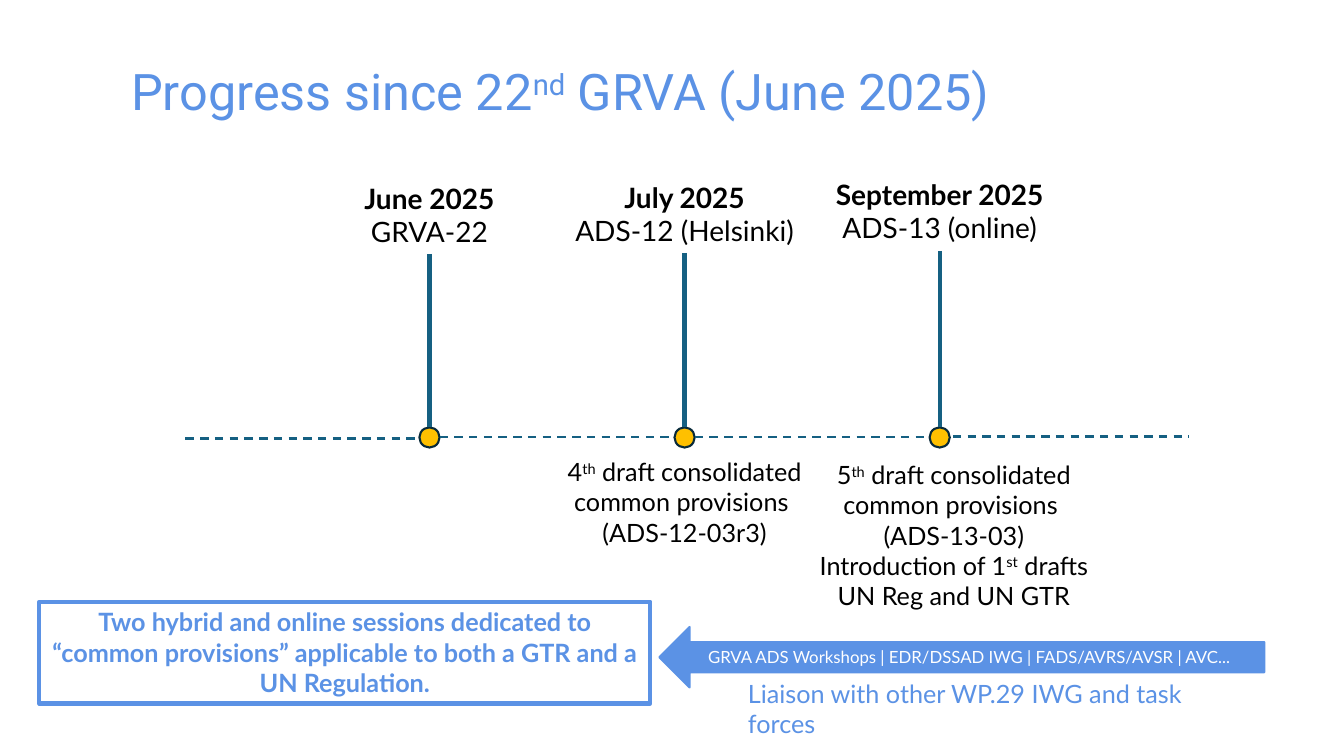
from dataclasses import dataclass

from pptx import Presentation
from pptx.dml.color import RGBColor
from pptx.enum.dml import MSO_LINE
from pptx.enum.shapes import MSO_CONNECTOR, MSO_SHAPE
from pptx.enum.text import MSO_ANCHOR, MSO_AUTO_SIZE, PP_ALIGN
from pptx.oxml import parse_xml
from pptx.oxml.ns import nsdecls
from pptx.shapes.autoshape import Shape
from pptx.slide import Slide
from pptx.text.text import TextFrame
from pptx.util import Emu, Pt

PX = 9144


@dataclass(frozen=True)
class Theme:
    accent: str = "5B92E5"
    stem: str = "156082"
    marker: str = "FFC000"
    marker_edge: str = "092A39"
    ink: str = "000000"
    paper: str = "FFFFFF"
    title_font: str = "Roboto"
    body_font: str = "Lato"
    title_size: int = 36
    label_size: int = 20
    body_size: int = 18
    small_size: int = 12
    thin: float = 1.5
    thick: float = 3


@dataclass(frozen=True)
class Box:
    left: int
    top: int
    width: int
    height: int

    def emu(self) -> tuple[Emu, Emu, Emu, Emu]:
        return px(self.left), px(self.top), px(self.width), px(self.height)


@dataclass(frozen=True)
class Paragraph:
    text: str
    bold: bool = False


@dataclass(frozen=True)
class Style:
    size: int
    color: str
    font: str
    align: PP_ALIGN = PP_ALIGN.CENTER


@dataclass(frozen=True)
class Note:
    box: Box
    paragraphs: tuple[Paragraph, ...]


@dataclass(frozen=True)
class Meeting:
    month: str
    session: str
    label_top: int
    stem_top: int


@dataclass(frozen=True)
class Dash:
    start: int
    end: int
    y: int


THEME = Theme()
LABEL = Style(THEME.label_size, THEME.ink, THEME.body_font)
BODY = Style(THEME.body_size, THEME.ink, THEME.body_font)
CALLOUT = Style(THEME.body_size, THEME.accent, THEME.body_font)
ARROW = Style(THEME.small_size, THEME.paper, THEME.body_font)
LIAISON = Style(THEME.body_size, THEME.accent, THEME.body_font, PP_ALIGN.LEFT)
TITLE = Style(THEME.title_size, THEME.accent, THEME.title_font, PP_ALIGN.LEFT)

FIRST_X, STEP_X, AXIS_Y, RADIUS = 426, 253, 434, 10
LABEL_WIDTH, LABEL_HEIGHT = 280, 77

MEETINGS = (
    Meeting("June 2025", "GRVA-22", 175, 252),
    Meeting("July 2025", "ADS-12 (Helsinki)", 174, 251),
    Meeting("September 2025", "ADS-13 (online)", 171, 249),
)
DASHES = (
    Dash(184, 417, 435),
    Dash(436, 669, 434),
    Dash(689, 922, 434),
    Dash(945, 1179, 433),
)
NOTES = (
    Note(Box(525, 448, 308, 101), (
        Paragraph("4^th^ draft consolidated common provisions "),
        Paragraph("(ADS-12-03r3)"),
    )),
    Note(Box(792, 451, 308, 162), (
        Paragraph("5^th^ draft consolidated common provisions "),
        Paragraph("(ADS-13-03)"),
        Paragraph("Introduction of 1^st^ drafts UN Reg and UN GTR"),
    )),
)


def px(length: int) -> Emu:
    return Emu(length * PX)


def rgb(color: str) -> RGBColor:
    return RGBColor.from_string(color)


def write(frame: TextFrame, paragraphs: tuple[Paragraph, ...], style: Style,
          anchor: MSO_ANCHOR = MSO_ANCHOR.TOP) -> None:
    frame.word_wrap = True
    frame.auto_size = MSO_AUTO_SIZE.NONE
    frame.vertical_anchor = anchor
    for index, content in enumerate(paragraphs):
        paragraph = frame.add_paragraph() if index else frame.paragraphs[0]
        paragraph.alignment = style.align
        paragraph.font.name = style.font
        paragraph.font.size = Pt(style.size)
        paragraph.font.bold = content.bold
        paragraph.font.color.rgb = rgb(style.color)
        for position, piece in enumerate(content.text.split("^")):
            run = paragraph.add_run()
            run.text = piece
            if position % 2:
                run._r.get_or_add_rPr().set("baseline", "30000")


def add_text(slide: Slide, box: Box, paragraphs: tuple[Paragraph, ...],
             style: Style) -> None:
    write(slide.shapes.add_textbox(*box.emu()).text_frame, paragraphs, style)


def add_figure(slide: Slide, kind: MSO_SHAPE, box: Box, fill: str | None,
               edge: str, weight: float) -> Shape:
    shape = slide.shapes.add_shape(kind, *box.emu())
    shape.shadow.inherit = False
    if fill:
        shape.fill.solid()
        shape.fill.fore_color.rgb = rgb(fill)
    else:
        shape.fill.background()
    shape.line.color.rgb = rgb(edge)
    shape.line.width = Pt(weight)
    return shape


def add_line(slide: Slide, start: tuple[int, int], end: tuple[int, int],
             weight: float, dashed: bool = False) -> None:
    line = slide.shapes.add_connector(
        MSO_CONNECTOR.STRAIGHT, *map(px, start), *map(px, end))
    line.line.color.rgb = rgb(THEME.stem)
    line.line.width = Pt(weight)
    if dashed:
        line.line.dash_style = MSO_LINE.DASH
    line._element.spPr.append(parse_xml(f"<a:effectLst {nsdecls('a')}/>"))


def add_meeting(slide: Slide, meeting: Meeting, x: int) -> None:
    add_figure(slide, MSO_SHAPE.OVAL,
               Box(x - RADIUS, AXIS_Y - RADIUS, 2 * RADIUS, 2 * RADIUS),
               THEME.marker, THEME.marker_edge, THEME.thin)
    add_line(slide, (x, meeting.stem_top), (x, AXIS_Y - RADIUS), THEME.thick)
    add_text(slide,
             Box(x - LABEL_WIDTH // 2, meeting.label_top, LABEL_WIDTH, LABEL_HEIGHT),
             (Paragraph(meeting.month, True), Paragraph(meeting.session)), LABEL)


def add_title(slide: Slide) -> None:
    title = slide.shapes.title
    title.left, title.top, title.width, title.height = Box(120, 26, 900, 100).emu()
    write(title.text_frame, (Paragraph("Progress since 22^nd^ GRVA (June 2025)"),),
          TITLE, MSO_ANCHOR.BOTTOM)
    title.text_frame.paragraphs[0].line_spacing = 0.9


def main() -> None:
    presentation = Presentation()
    presentation.slide_width, presentation.slide_height = px(1333), px(750)
    slide = presentation.slides.add_slide(presentation.slide_layouts[5])
    add_title(slide)
    for index, meeting in enumerate(MEETINGS):
        add_meeting(slide, meeting, FIRST_X + index * STEP_X)
    for dash in DASHES:
        add_line(slide, (dash.start, dash.y), (dash.end, dash.y), THEME.thin, True)
    for note in NOTES:
        add_text(slide, note.box, note.paragraphs, BODY)
    callout = add_figure(slide, MSO_SHAPE.RECTANGLE, Box(39, 597, 606, 101),
                         None, THEME.accent, THEME.thick)
    write(callout.text_frame, (Paragraph(
        "Two hybrid and online sessions dedicated to “common provisions” "
        "applicable to both a GTR and a UN Regulation.", True),), CALLOUT)
    arrow = add_figure(slide, MSO_SHAPE.LEFT_ARROW, Box(654, 622, 600, 60),
                       THEME.accent, THEME.accent, THEME.thin)
    write(arrow.text_frame, (Paragraph(
        "GRVA ADS Workshops | EDR/DSSAD IWG | FADS/AVRS/AVSR | AVC..."),),
        ARROW, MSO_ANCHOR.MIDDLE)
    add_text(slide, Box(732, 668, 484, 40),
             (Paragraph("Liaison with other WP.29 IWG and task forces"),), LIAISON)
    presentation.save("out.pptx")


if __name__ == "__main__":
    main()
